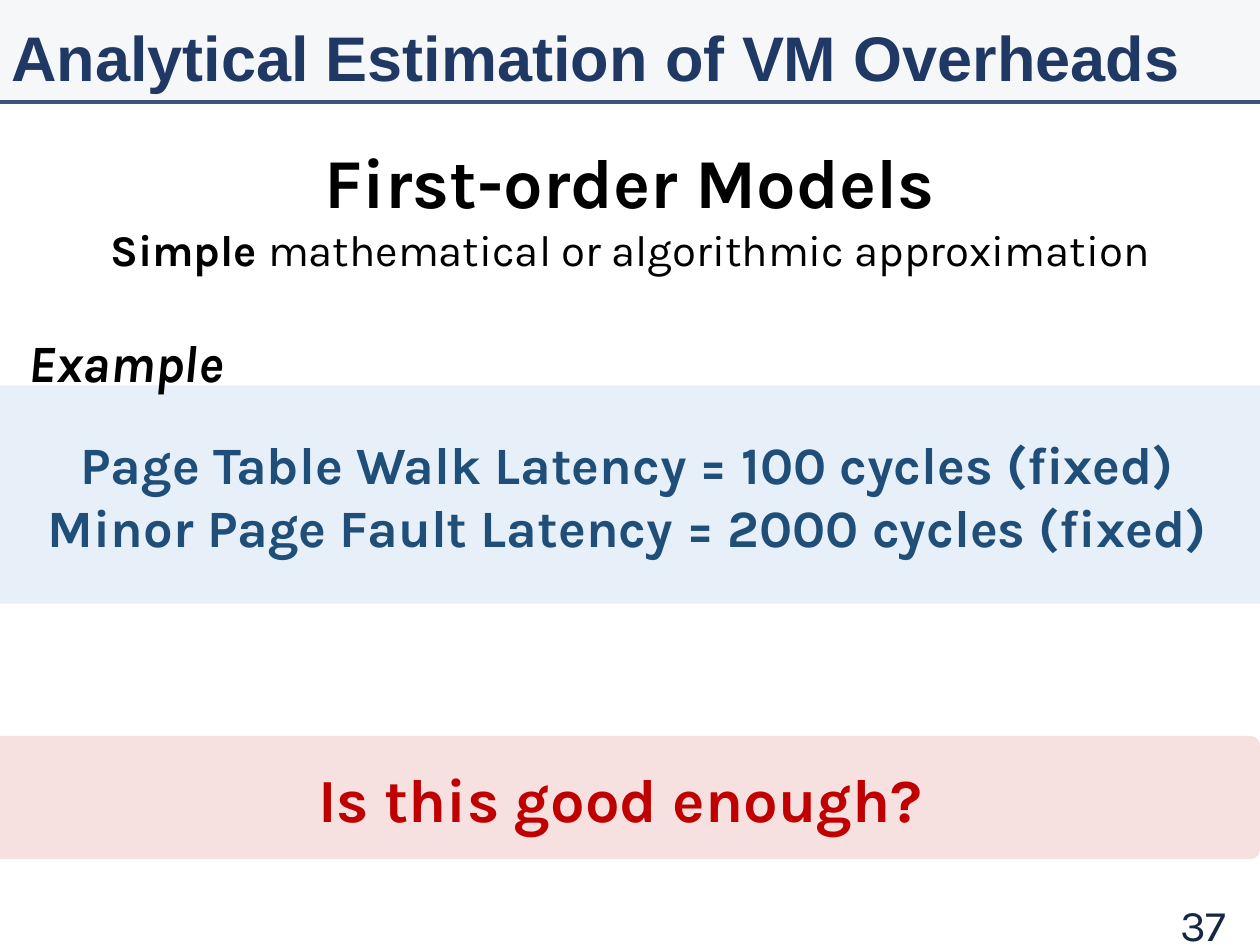
"""Build the slide on first-order models of VM overheads."""
from pptx import Presentation
from pptx.dml.color import RGBColor
from pptx.enum.shapes import MSO_CONNECTOR, MSO_SHAPE
from pptx.enum.text import MSO_ANCHOR, PP_ALIGN
from pptx.oxml.ns import qn
from pptx.util import Pt
from lxml.etree import SubElement

WIDTH, HEIGHT = 720, 540
HEADER_HEIGHT = 58.3
CORNER = 0.077

BLACK = RGBColor(0x00, 0x00, 0x00)
NAVY = RGBColor(0x20, 0x38, 0x64)
DARK_NAVY = RGBColor(0x16, 0x27, 0x46)
GREY_BLUE = RGBColor(0xAD, 0xB9, 0xCA)
LIGHT_BLUE = RGBColor(0x9D, 0xC3, 0xE6)
STEEL = RGBColor(0x1F, 0x4E, 0x79)
RED = RGBColor(0xC0, 0x00, 0x00)

LEFT, CENTER, RIGHT = PP_ALIGN.LEFT, PP_ALIGN.CENTER, PP_ALIGN.RIGHT
TOP, MIDDLE = MSO_ANCHOR.TOP, MSO_ANCHOR.MIDDLE

BANDS = [
    ((-19.4, 220.3, 756, 124.6), LIGHT_BLUE, 24, 30, STEEL,
     [[("Page Table Walk Latency = 100 cycles (fixed)", "b")],
      [("Minor Page Fault Latency = 2000 cycles (fixed)", "b")]]),
    ((-10.8, 420.5, 730.8, 70.5), RED, 12, 35, RED,
     [[("Is this good enough?", "b")]]),
]
LABELS = [
    ((545.8, 513.4, 162, 28.8), MIDDLE, RIGHT, "Karla", 25, DARK_NAVY, [[("37", "")]]),
    ((-0.7, -2.9, 720.7, 70.6), MIDDLE, LEFT, "Arial", 36, NAVY,
     [[("Analytical Estimation of VM Overheads", "b")]]),
    ((9.4, 185, 141.1, 43.9), TOP, LEFT, "Karla", 30, BLACK, [[("Example", "bi")]]),
    ((-0.7, 75.6, 720.7, 55.4), TOP, CENTER, "Karla", 40, BLACK,
     [[("First-order Models", "b")]]),
    ((0, 123.8, 720, 37.4), TOP, CENTER, "Karla", 25, BLACK,
     [[("Simple ", "b"), ("mathematical or algorithmic approximation", "")]]),
]


def set_opacity(shape, percent):
    for color in shape._element.spPr.iter(qn("a:srgbClr")):
        SubElement(color, qn("a:alpha")).set("val", str(percent * 1000))


def add_band(slide, preset, box, color, opacity):
    band = slide.shapes.add_shape(preset, *map(Pt, box))
    band.shadow.inherit = False
    band.fill.solid()
    band.fill.fore_color.rgb = color
    band.line.fill.background()
    set_opacity(band, opacity)
    return band


def write(shape, anchor, align, font_name, size, color, lines):
    frame = shape.text_frame
    frame.word_wrap = True
    frame.vertical_anchor = anchor
    for index, line in enumerate(lines):
        paragraph = frame.add_paragraph() if index else frame.paragraphs[0]
        paragraph.alignment = align
        for text, style in line:
            run = paragraph.add_run()
            run.text = text
            run.font.name = font_name
            run.font.size = Pt(size)
            run.font.color.rgb = color
            run.font.bold = "b" in style
            run.font.italic = "i" in style


def main():
    deck = Presentation()
    deck.slide_width, deck.slide_height = Pt(WIDTH), Pt(HEIGHT)
    slide = deck.slides.add_slide(deck.slide_layouts[6])

    add_band(slide, MSO_SHAPE.RECTANGLE, (0, 0, WIDTH, HEADER_HEIGHT), GREY_BLUE, 10)
    rule = slide.shapes.add_connector(
        MSO_CONNECTOR.STRAIGHT, 0, Pt(HEADER_HEIGHT), Pt(WIDTH), Pt(HEADER_HEIGHT))
    rule.line.width = Pt(2.25)
    rule.line.color.rgb = NAVY
    set_opacity(rule, 86)
    SubElement(rule._element.spPr, qn("a:effectLst"))

    for box, fill, opacity, size, color, lines in BANDS:
        band = add_band(slide, MSO_SHAPE.ROUNDED_RECTANGLE, box, fill, opacity)
        band.adjustments[0] = CORNER
        write(band, MIDDLE, CENTER, "Karla", size, color, lines)
    for box, *text in LABELS:
        write(slide.shapes.add_textbox(*map(Pt, box)), *text)

    deck.save("out.pptx")


if __name__ == "__main__":
    main()
